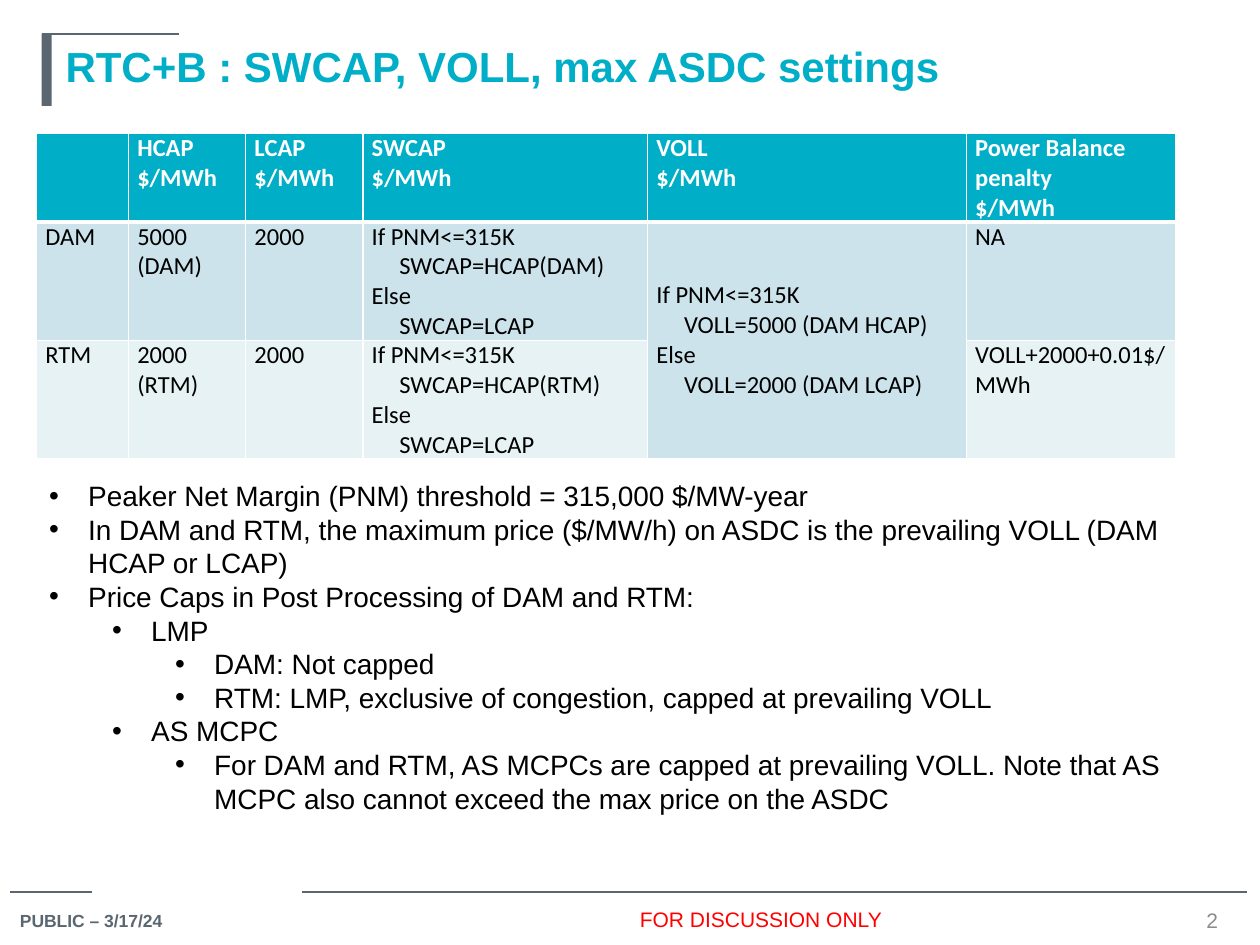
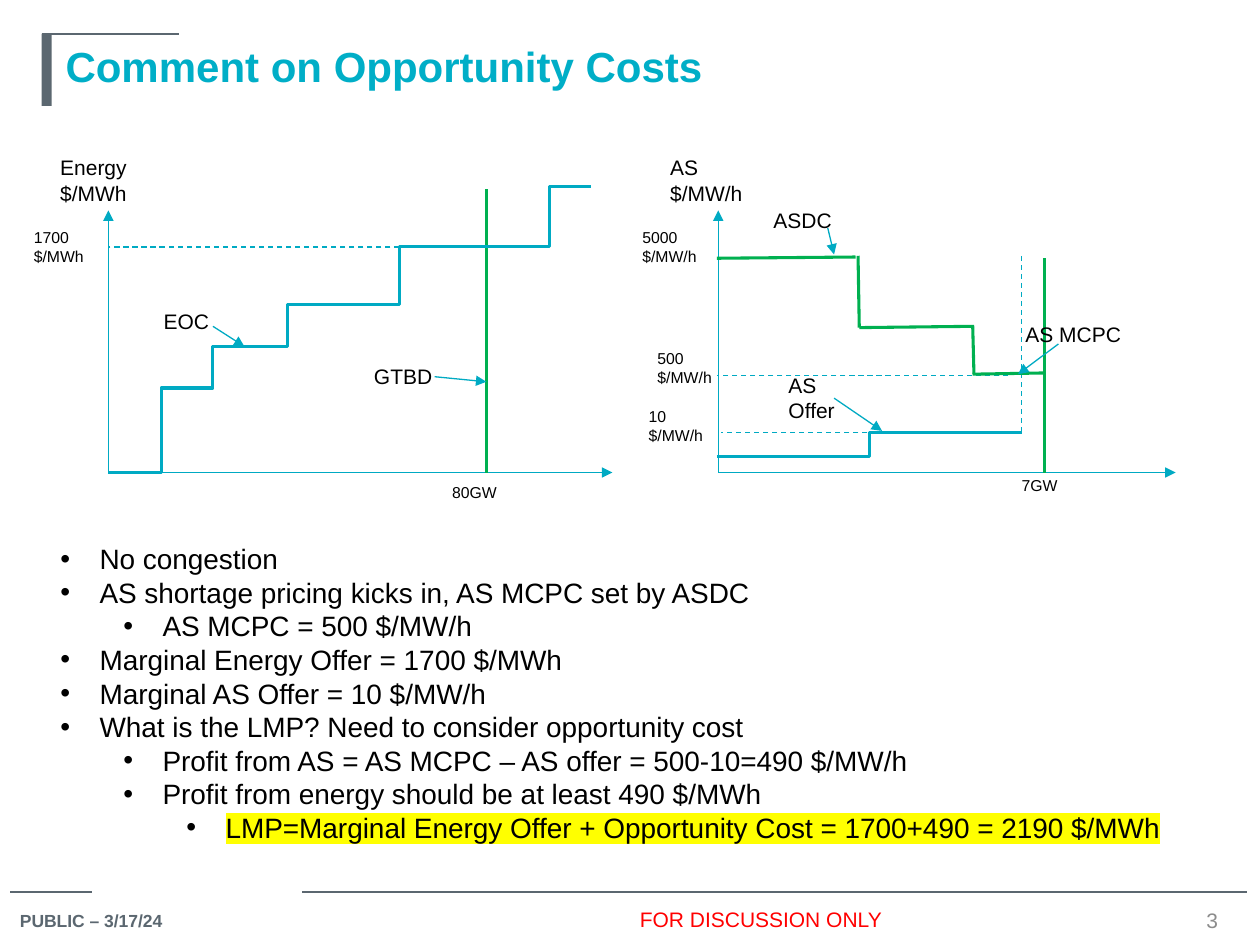
from dataclasses import dataclass
from itertools import product

from lxml import etree
from pptx import Presentation
from pptx.dml.color import RGBColor
from pptx.enum.dml import MSO_LINE
from pptx.enum.shapes import MSO_CONNECTOR, MSO_SHAPE
from pptx.enum.text import MSO_ANCHOR, MSO_AUTO_SIZE, PP_ALIGN
from pptx.oxml.ns import qn
from pptx.util import Inches, Pt

DASH = MSO_LINE.DASH
STRAIGHT = MSO_CONNECTOR.STRAIGHT
RECT = MSO_SHAPE.RECTANGLE
TOP, MIDDLE = MSO_ANCHOR.TOP, MSO_ANCHOR.MIDDLE
NO_FIT = MSO_AUTO_SIZE.NONE
LEFT, CENTER = PP_ALIGN.LEFT, PP_ALIGN.CENTER


@dataclass(frozen=True)
class Theme:
    font: str = "Arial"
    grid_font: str = "Calibri"
    teal: str = "00AEC7"
    curve: str = "00AAC3"
    green: str = "00B050"
    slate: str = "5B6770"
    gray: str = "8C8C8C"
    red: str = "FF0000"
    black: str = "000000"
    white: str = "FFFFFF"
    yellow: str = "FFFF00"
    bands: tuple = ("CCE3EB", "E7F2F5")
    title: int = 24
    body: int = 16
    grid: int = 14
    label: int = 12
    small: int = 10
    tick: int = 9
    thin: float = 0.75
    thick: float = 1.75


T = Theme()

HEADS = ["", "HCAP\n$/MWh", "LCAP\n$/MWh", "SWCAP\n$/MWh", "VOLL\n$/MWh",
         "Power Balance penalty\n$/MWh"]
# A leading ">" marks an indented line.
ROWS = [
    ["DAM", "5000 (DAM)", "2000",
     "If PNM<=315K\n>SWCAP=HCAP(DAM)\nElse\n>SWCAP=LCAP",
     "If PNM<=315K\n>VOLL=5000 (DAM HCAP)\nElse\n>VOLL=2000 (DAM LCAP)", "NA"],
    ["RTM", "2000 (RTM)", "2000",
     "If PNM<=315K\n>SWCAP=HCAP(RTM)\nElse\n>SWCAP=LCAP",
     "", "VOLL+2000+0.01$/MWh"],
]
WIDTHS = [0.73, 0.93, 0.93, 2.26, 2.53, 1.66]
HEIGHTS = [0.69, 0.94, 0.94]
VOLL = 4

CAPS = [
    (0, "Peaker Net Margin (PNM) threshold = 315,000 $/MW-year"),
    (0, "In DAM and RTM, the maximum price ($/MW/h) on ASDC is the prevailing VOLL "
        "(DAM HCAP or LCAP)"),
    (0, "Price Caps in Post Processing of DAM and RTM:"),
    (1, "LMP"),
    (2, "DAM: Not capped"),
    (2, "RTM: LMP, exclusive of congestion, capped at prevailing VOLL"),
    (1, "AS MCPC"),
    (2, "For DAM and RTM, AS MCPCs are capped at prevailing VOLL. Note that AS MCPC "
        "also cannot exceed the max price on the ASDC"),
]
COSTS = [
    (0, "No congestion"),
    (0, "AS shortage pricing kicks in, AS MCPC set by ASDC"),
    (1, "AS MCPC = 500 $/MW/h"),
    (0, "Marginal Energy Offer = 1700 $/MWh"),
    (0, "Marginal AS Offer = 10 $/MW/h"),
    (0, "What is the LMP? Need to consider opportunity cost"),
    (1, "Profit from AS = AS MCPC – AS offer = 500-10=490 $/MW/h"),
    (1, "Profit from energy should be at least 490 $/MWh"),
    (2, "LMP=Marginal Energy Offer + Opportunity Cost = 1700+490 = 2190 $/MWh"),
]

BASE = 3.75  # height of both horizontal axes
EOC = [(0.86, BASE), (1.28, BASE), (1.28, 3.08), (1.69, 3.08), (1.69, 2.75), (2.28, 2.75),
       (2.28, 2.42), (3.17, 2.42), (3.17, 1.96), (4.36, 1.96), (4.36, 1.48), (4.69, 1.48)]
OFFER = [(5.69, 3.62), (6.9, 3.62), (6.9, 3.43), (8.11, 3.43)]
ASDC = [((5.69, 2.05), (6.79, 2.04)), ((6.81, 2.03), (6.82, 2.6)), ((6.82, 2.6), (7.73, 2.59)),
        ((7.72, 2.58), (7.73, 2.97)), ((7.72, 2.97), (8.29, 2.96))]
GUIDES = [((3.17, 1.96), (0.86, 1.96)), ((8.11, 2.03), (8.11, 3.44)),
          ((8.03, 3.43), (5.72, 3.43)), ((8, 2.98), (5.69, 2.98))]
LIMITS = [((3.86, BASE), (3.86, 1.5)), ((8.29, BASE), (8.29, 2.05))]
POINTERS = [((3.45, 2.99), (3.86, 3.03)), ((1.69, 2.59), (1.94, 2.75)),
            ((6.57, 1.81), (6.62, 2.02)), ((6.62, 3.16), (7, 3.42)),
            ((8.4, 2.73), (8.08, 2.97))]
LABELS = [
    ("Energy $/MWh", (0.38, 1.18, 0.73, 0.5)), ("GTBD", (2.87, 2.84, 0.74, 0.3)),
    ("EOC", (1.2, 2.4, 0.74, 0.3)), ("AS\n$/MW/h", (5.22, 1.18, 0.82, 0.5)),
    ("ASDC", (6.04, 1.6, 0.74, 0.3)), ("AS Offer", (6.16, 2.91, 0.74, 0.5)),
    ("AS MCPC", (8.04, 2.5, 1.02, 0.3)),
]
TICKS = [
    ("1700 $/MWh", (0.17, 1.76, 0.73, 0.4)), ("80GW", (3.49, 3.78, 0.78, 0.25)),
    ("5000 $/MW/h", (5, 1.76, 0.73, 0.4)), ("7GW", (8.01, 3.73, 0.78, 0.25)),
    ("10 $/MW/h", (5.05, 3.18, 0.73, 0.4)), ("500 $/MW/h", (5.12, 2.72, 0.73, 0.4)),
]


def rgb(code):
    return RGBColor.from_string(code)


def style(para, size, color, bold=False, font=T.font):
    for run in para.runs:
        face = run.font
        face.name, face.size, face.bold = font, Pt(size), bold
        face.color.rgb = rgb(color)


def place(shape, box):
    shape.left, shape.top, shape.width, shape.height = map(Inches, box)


def add_text(slide, text, box, size, color=T.black, bold=False, align=LEFT, anchor=TOP):
    frame = slide.shapes.add_textbox(*map(Inches, box)).text_frame
    frame.word_wrap = True
    frame.vertical_anchor = anchor
    frame.text = text
    for para in frame.paragraphs:
        para.alignment = align
        style(para, size, color, bold)


def add_line(slide, start, end, color=T.curve, width=T.thin, dash=False, arrow=False):
    line = slide.shapes.add_connector(STRAIGHT, *map(Inches, (*start, *end)))
    line.line.color.rgb = rgb(color)
    line.line.width = Pt(width)
    if dash:
        line.line.dash_style = DASH
    if arrow:
        etree.SubElement(line.line._get_or_add_ln(), qn("a:tailEnd"), type="triangle")
    etree.SubElement(line._element.spPr, qn("a:effectLst"))


def add_steps(slide, points):
    """Draw an open stair-shaped curve through the points."""
    first, *rest = [(Inches(x), Inches(y)) for x, y in points]
    pen = slide.shapes.build_freeform(*first)
    pen.add_line_segments(rest, close=False)
    curve = pen.convert_to_shape()
    curve.shadow.inherit = False
    curve.fill.background()
    curve.line.color.rgb = rgb(T.curve)
    curve.line.width = Pt(T.thick)


def add_slide(deck, title, number):
    """Add a slide with the shared title, rules and footers."""
    slide = deck.slides.add_slide(deck.slide_layouts[1])
    for start, end in [((0.08, 7.08), (0.73, 7.08)), ((2.4, 7.08), (9.9, 7.08)),
                       ((0.33, 0.27), (1.42, 0.27))]:
        add_line(slide, start, end, T.slate)
    bar = slide.shapes.add_shape(RECT, *map(Inches, (0.33, 0.27, 0.08, 0.57)))
    bar.shadow.inherit = False
    bar.fill.solid()
    bar.fill.fore_color.rgb = rgb(T.slate)
    bar.line.fill.background()

    head = slide.shapes.title
    place(head, (0.42, 0.27, 9.25, 0.57))
    frame = head.text_frame
    frame.text = title
    frame.auto_size = NO_FIT
    frame.vertical_anchor = TOP
    frame.paragraphs[0].alignment = LEFT
    style(frame.paragraphs[0], T.title, T.teal, True)

    add_text(slide, "PUBLIC – 3/17/24", (0.06, 7.17, 1.86, 0.27), T.small, T.slate, True)
    add_text(slide, "FOR DISCUSSION ONLY", (3.5, 7.17, 5.08, 0.25), T.label, T.red,
             align=CENTER, anchor=MIDDLE)
    add_text(slide, str(number), (9.33, 7.18, 0.58, 0.24), T.label, T.gray,
             align=CENTER, anchor=MIDDLE)
    return slide


def fill_list(slide, items, box):
    body = slide.placeholders[1]
    place(body, box)
    frame = body.text_frame
    frame.text = "\n".join(text for _, text in items)
    frame.auto_size = NO_FIT
    for para, (level, _) in zip(frame.paragraphs, items):
        para.level = level
        para.space_before = Pt(0)
        props = para._p.get_or_add_pPr()
        props.set("marL", str(Inches(0.31 + 0.5 * level)))
        props.set("indent", str(Inches(-0.31)))
        etree.SubElement(props, qn("a:buFont"), typeface=T.font)
        etree.SubElement(props, qn("a:buChar"), char="•")
        style(para, T.body, T.black)
    return frame


def mark(run, color):
    """Highlight a run that already has its font and colour."""
    light = etree.Element(qn("a:highlight"))
    etree.SubElement(light, qn("a:srgbClr"), val=color)
    run._r.get_or_add_rPr().find(qn("a:latin")).addprevious(light)


def edge(cell, heavy):
    """Give a cell white borders, with a heavy bottom or top if named."""
    props = cell._tc.get_or_add_tcPr()
    for side in "LRTB":
        width = Pt(3 if side == heavy else 1)
        line = etree.SubElement(props, qn(f"a:ln{side}"), w=str(width))
        paint = etree.SubElement(line, qn("a:solidFill"))
        etree.SubElement(paint, qn("a:srgbClr"), val=T.white)


def fill_cell(cell, text, row):
    edge(cell, {0: "B", 1: "T"}.get(row))
    cell.fill.solid()
    cell.fill.fore_color.rgb = rgb(T.bands[row - 1] if row else T.teal)
    cell.margin_left = cell.margin_right = Inches(0.07)
    cell.margin_top = cell.margin_bottom = 0
    lines = text.split("\n")
    cell.text = "\n".join(line.lstrip(">") for line in lines)
    for para, line in zip(cell.text_frame.paragraphs, lines):
        if line.startswith(">"):
            para._p.get_or_add_pPr().set("marL", str(Inches(0.22)))
        style(para, T.grid, T.black if row else T.white, row == 0, T.grid_font)


def add_grid(slide):
    data = [HEADS, *ROWS]
    box = (0.29, 1.06, sum(WIDTHS), sum(HEIGHTS))
    grid = slide.shapes.add_table(len(data), len(HEADS), *map(Inches, box)).table
    for col, width in zip(grid.columns, WIDTHS):
        col.width = Inches(width)
    for row, height in zip(grid.rows, HEIGHTS):
        row.height = Inches(height)
    for row, col in product(range(len(data)), range(len(HEADS))):
        fill_cell(grid.cell(row, col), data[row][col], row)
    grid.cell(1, VOLL).merge(grid.cell(2, VOLL))
    grid.cell(1, VOLL).vertical_anchor = MIDDLE


def add_plots(slide):
    for left, right in [(0.86, 4.86), (5.7, 9.33)]:
        for end in [(right, BASE), (left, 1.67)]:
            add_line(slide, (left, BASE), end, arrow=True)
    for start, end in GUIDES:
        add_line(slide, start, end, dash=True)
    for start, end in LIMITS + ASDC:
        add_line(slide, start, end, T.green, T.thick)
    for points in (EOC, OFFER):
        add_steps(slide, points)
    for start, end in POINTERS:
        add_line(slide, start, end, arrow=True)
    for texts, size in [(LABELS, T.label), (TICKS, T.tick)]:
        for text, box in texts:
            add_text(slide, text, box, size)


def main():
    deck = Presentation()
    deck.slide_width, deck.slide_height = Inches(10), Inches(7.5)

    caps = add_slide(deck, "RTC+B : SWCAP, VOLL, max ASDC settings", 2)
    add_grid(caps)
    fill_list(caps, CAPS, (0.29, 3.75, 9.21, 2.79))

    costs = add_slide(deck, "Comment on Opportunity Costs", 3)
    add_plots(costs)
    frame = fill_list(costs, COSTS, (0.38, 4.25, 9.2, 2.79))
    mark(frame.paragraphs[-1].runs[0], T.yellow)

    deck.save("out.pptx")


if __name__ == "__main__":
    main()
